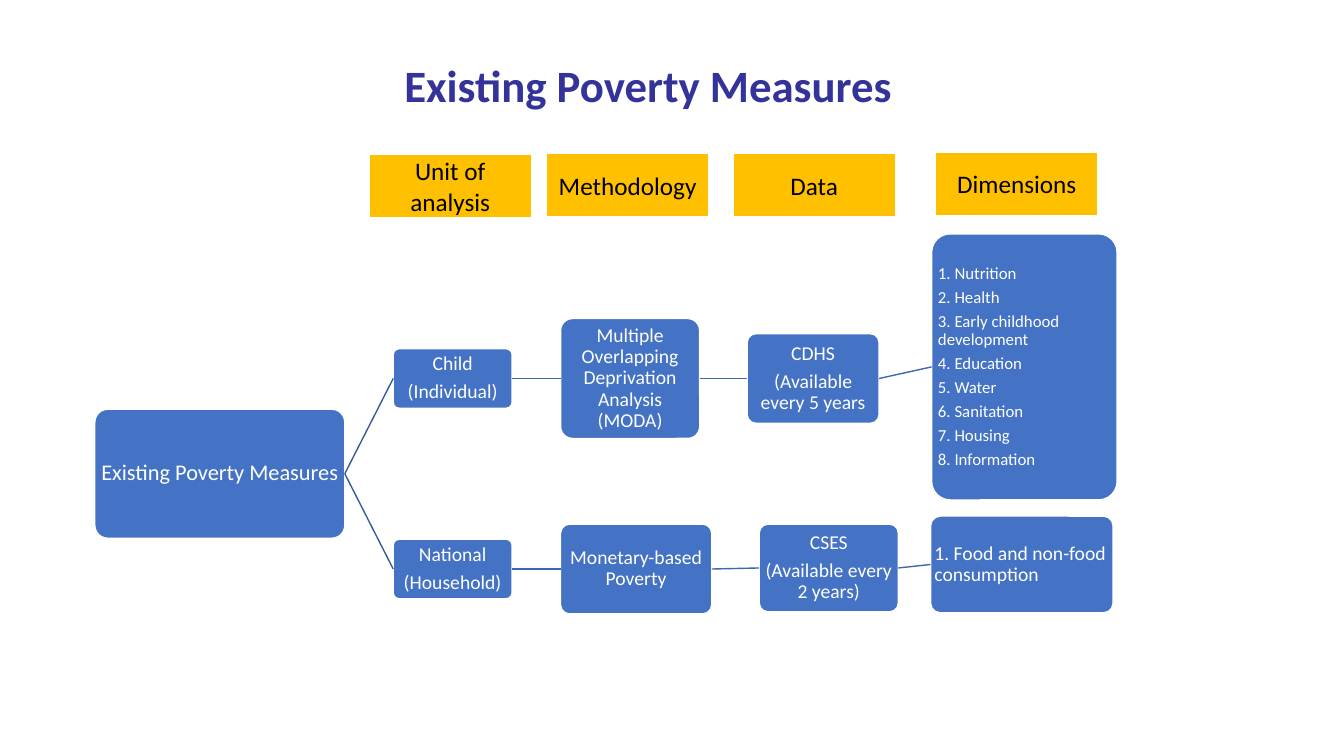
from lxml.etree import SubElement
from pptx import Presentation
from pptx.dml.color import RGBColor
from pptx.enum.shapes import MSO_CONNECTOR, MSO_SHAPE
from pptx.enum.text import MSO_ANCHOR, MSO_AUTO_SIZE, PP_ALIGN
from pptx.oxml.ns import qn
from pptx.util import Inches, Pt

BLUE, GOLD, WHITE, BLACK, NAVY = "4472C4", "FFC000", "FFFFFF", "000000", "333399"
DARK, MID = "365B9D", "3E67B2"


def paint(color, code):
    color.rgb = RGBColor.from_string(code)


def write(frame, lines, size=14, color=WHITE, bold=False,
          align=PP_ALIGN.CENTER, space=None, after=0, inset=None):
    frame.word_wrap = True
    frame.auto_size = MSO_AUTO_SIZE.NONE
    frame.vertical_anchor = MSO_ANCHOR.MIDDLE
    if inset is not None:
        frame.margin_left = frame.margin_right = Inches(inset)
        frame.margin_top = frame.margin_bottom = Inches(inset)
    for i, line in enumerate(lines):
        para = frame.add_paragraph() if i else frame.paragraphs[0]
        para.alignment = align
        para.space_after = Pt(after)
        if space:
            para.line_spacing = space
        run = para.add_run()
        run.text = line
        run.font.name = "Calibri"
        run.font.size = Pt(size)
        run.font.bold = bold
        paint(run.font.color, color)


class Board:
    def __init__(self, slide):
        self.slide = slide
        self.shapes = slide.shapes

    def title(self, text, left, top, width, height):
        shape = self.shapes.title
        shape.left, shape.top = Inches(left), Inches(top)
        shape.width, shape.height = Inches(width), Inches(height)
        write(shape.text_frame, [text], size=32, color=NAVY, bold=True)

    def box(self, kind, place, fill):
        shape = self.shapes.add_shape(kind, *map(Inches, place))
        shape.shadow.inherit = False
        shape.fill.solid()
        paint(shape.fill.fore_color, fill)
        paint(shape.line.color, WHITE)
        shape.line.width = Pt(1)
        return shape

    def head(self, text, left, top):
        shape = self.box(MSO_SHAPE.RECTANGLE, (left, top, 1.61, 0.63), GOLD)
        write(shape.text_frame, [text], size=18, color=BLACK)

    def node(self, lines, place, size=14, align=PP_ALIGN.CENTER):
        shape = self.box(MSO_SHAPE.ROUNDED_RECTANGLE, place, BLUE)
        shape.adjustments[0] = 0.1
        write(shape.text_frame, lines, size=size, align=align,
              space=0.9, after=0.35 * size, inset=0.01)
        return shape

    def link(self, start, end, color):
        line = self.shapes.add_connector(MSO_CONNECTOR.STRAIGHT, 0, 0, 0, 0)
        line.begin_connect(start, 3)
        line.end_connect(end, 1)
        paint(line.line.color, color)
        line.line.width = Pt(1)
        SubElement(line._element.spPr, qn("a:effectLst"))


def main():
    deck = Presentation()
    deck.slide_width, deck.slide_height = Inches(13.33), Inches(7.5)
    board = Board(deck.slides.add_slide(deck.slide_layouts[5]))
    board.title("Existing Poverty Measures", 2.06, 0.52, 8.74, 0.64)

    # Column heads
    heads = [("Unit of analysis", 3.66, 1.53), ("Methodology", 5.42, 1.52),
             ("Data", 7.27, 1.52), ("Dimensions", 9.28, 1.51)]
    for head in heads:
        board.head(*head)

    # Tree: one chain of nodes per measure
    root = board.node(["Existing Poverty Measures"], (0.94, 4.06, 2.48, 1.28), 16)
    topics = ["Nutrition", "Health", "Early childhood development", "Education",
              "Water", "Sanitation", "Housing", "Information"]
    topics = [f"{i}. {topic}" for i, topic in enumerate(topics, 1)]
    left = PP_ALIGN.LEFT
    child = [
        (["Child", "(Individual)"], (3.9, 3.46, 1.18, 0.59)),
        (["Multiple Overlapping Deprivation Analysis (MODA)"],
         (5.56, 3.16, 1.38, 1.19)),
        (["CDHS", "(Available every 5 years"], (7.41, 3.31, 1.31, 0.89)),
        (topics, (9.24, 2.32, 1.84, 2.64), 12, left),
    ]
    nation = [
        (["National", "(Household)"], (3.9, 5.35, 1.18, 0.59)),
        (["Monetary-based Poverty"], (5.56, 5.2, 1.5, 0.89)),
        (["CSES", "(Available every 2 years)"], (7.53, 5.2, 1.38, 0.87)),
        (["1. Food and non-food consumption"], (9.23, 5.12, 1.81, 0.96), 14, left),
    ]
    for chain in (child, nation):
        last = root
        for item in chain:
            node = board.node(*item)
            board.link(last, node, DARK if last is root else MID)
            last = node

    deck.save("out.pptx")


if __name__ == "__main__":
    main()
